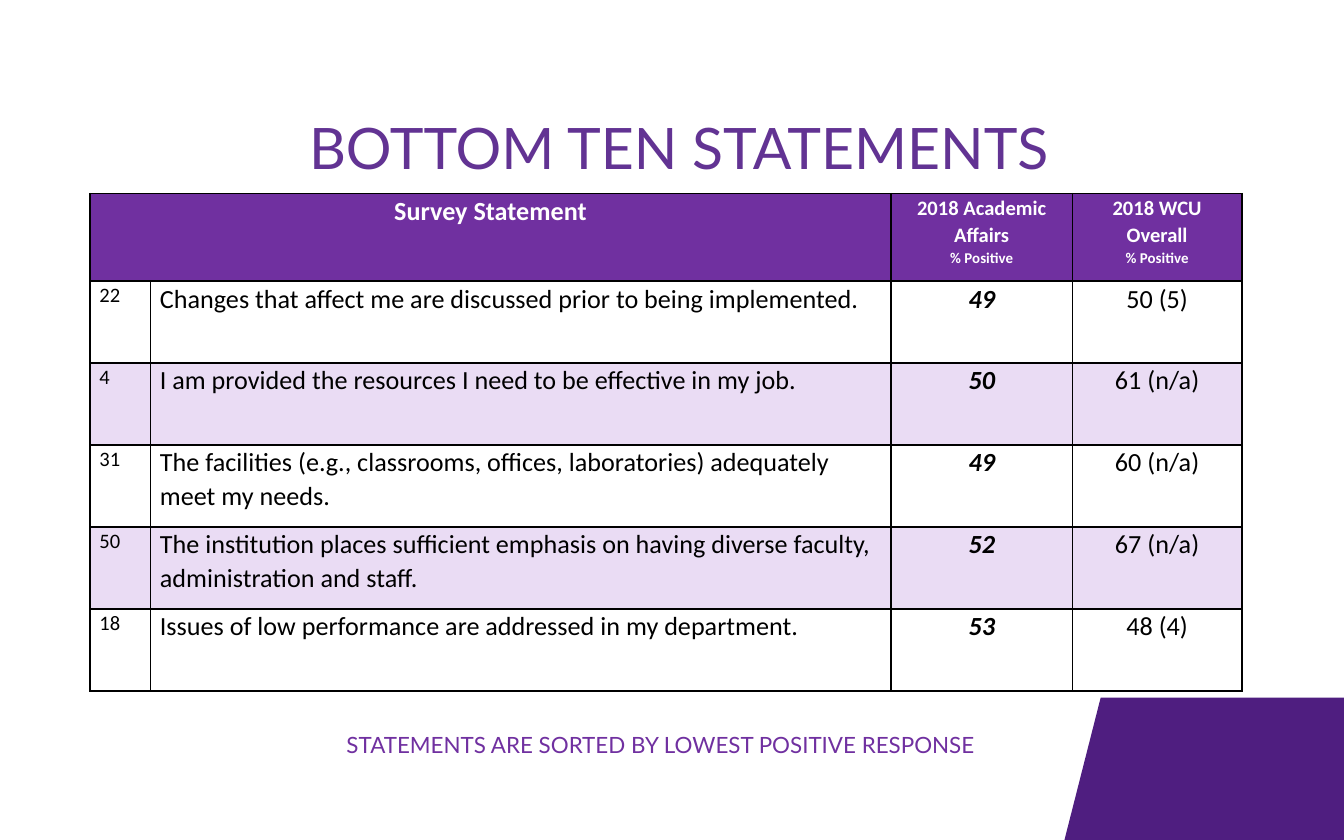
from lxml.etree import SubElement
from pptx import Presentation
from pptx.dml.color import RGBColor
from pptx.enum.text import MSO_ANCHOR as Anchor, PP_ALIGN as Align
from pptx.oxml.ns import qn
from pptx.util import Inches, Pt

TITLE = "BOTTOM TEN STATEMENTS"
FOOTNOTE = "STATEMENTS ARE SORTED BY LOWEST POSITIVE RESPONSE"
HEADERS = [
    (0, ["Survey Statement"]),
    (2, ["2018 Academic Affairs", "% Positive"]),
    (3, ["2018 WCU Overall", "% Positive"]),
]
STATEMENTS = [
    ("22", "Changes that affect me are discussed prior to being implemented.", "49", "50 (5)"),
    ("4", "I am provided the resources I need to be effective in my job.", "50", "61 (n/a)"),
    ("31", "The facilities (e.g., classrooms, offices, laboratories) adequately meet my needs.", "49", "60 (n/a)"),
    ("50", "The institution places sufficient emphasis on having diverse faculty, administration and staff.", "52", "67 (n/a)"),
    ("18", "Issues of low performance are addressed in my department.", "53", "48 (4)"),
]
COLUMN_WIDTHS = [0.45, 5.51, 1.35, 1.26]
HEADER_HEIGHT, ROW_HEIGHT = 0.65, 0.61
PURPLE, LILAC, BLACK, WHITE = "7030A0", "EADCF4", "000000", "FFFFFF"


def color(value):
    return RGBColor.from_string(value)


def style(paragraph, name, size, hue, align, spacing, bold=False, italic=False):
    paragraph.alignment = align
    paragraph.line_spacing = spacing
    font = paragraph.font
    font.name, font.size, font.bold, font.italic = name, Pt(size), bold, italic
    font.color.rgb = color(hue)


def add_text(slide, box, text, size, hue, align, spacing, anchor):
    frame = slide.shapes.add_textbox(*map(Inches, box)).text_frame
    frame.word_wrap = True
    frame.vertical_anchor = anchor
    frame.text = text
    style(frame.paragraphs[0], "Lato", size, hue, align, Pt(spacing))


def add_borders(cell):
    properties = cell._tc.get_or_add_tcPr()
    for position, side in enumerate(("lnL", "lnR", "lnT", "lnB")):
        line = properties.makeelement(qn(f"a:{side}"), {"w": str(Pt(1))})
        fill = SubElement(line, qn("a:solidFill"))
        SubElement(fill, qn("a:srgbClr"), val=BLACK)
        properties.insert(position, line)


def fill_cell(cell, lines, sizes, hue, align, bold=False, italic=False):
    cell.text = "\n".join(lines)
    for paragraph, size in zip(cell.text_frame.paragraphs, sizes):
        style(paragraph, "Calibri", size, hue, align, 1.07, bold, italic)


def add_statement_table(slide):
    height = HEADER_HEIGHT + ROW_HEIGHT * len(STATEMENTS)
    box = (0.67, 1.44, sum(COLUMN_WIDTHS), height)
    table = slide.shapes.add_table(
        len(STATEMENTS) + 1, len(COLUMN_WIDTHS), *map(Inches, box)).table
    for column, width in zip(table.columns, COLUMN_WIDTHS):
        column.width = Inches(width)
    for index, row in enumerate(table.rows):
        row.height = Inches(ROW_HEIGHT if index else HEADER_HEIGHT)
        for cell in row.cells:
            cell.margin_left = cell.margin_right = Inches(0.07)
            cell.margin_top = cell.margin_bottom = 0
            if index % 2:
                cell.fill.background()
            else:
                cell.fill.solid()
                cell.fill.fore_color.rgb = color(LILAC if index else PURPLE)
            add_borders(cell)

    table.cell(0, 0).merge(table.cell(0, 1))
    for column, lines in HEADERS:
        sizes = (11, 8) if column else (14,)
        fill_cell(table.cell(0, column), lines, sizes, WHITE, Align.CENTER, bold=True)
    for row, values in enumerate(STATEMENTS, 1):
        for column, value in enumerate(values):
            score = column == 2
            fill_cell(table.cell(row, column), [value], (14 if column else 11,), BLACK,
                      Align.CENTER if column >= 2 else Align.LEFT, score, score)


def add_corner(slide):
    builder = slide.shapes.build_freeform(Inches(8.19), Inches(5.19))
    corners = [(10, 5.19), (10, 6.25), (7.92, 6.25)]
    builder.add_line_segments([(Inches(x), Inches(y)) for x, y in corners], close=True)
    corner = builder.convert_to_shape()
    corner.shadow.inherit = False
    corner.fill.solid()
    corner.fill.fore_color.rgb = color("4F1E80")
    corner.line.fill.background()


def main():
    presentation = Presentation()
    presentation.slide_width, presentation.slide_height = Inches(10), Inches(6.25)
    slide = presentation.slides.add_slide(presentation.slide_layouts[6])
    add_corner(slide)
    add_text(slide, (0.4, 0.56, 9.3, 1.15), TITLE, 30.6, "623393", Align.CENTER, 30, Anchor.MIDDLE)
    add_statement_table(slide)
    add_text(slide, (2.48, 5.12, 5, 0.58), FOOTNOTE, 12, PURPLE, Align.LEFT, 34, Anchor.TOP)
    presentation.save("out.pptx")


if __name__ == "__main__":
    main()
